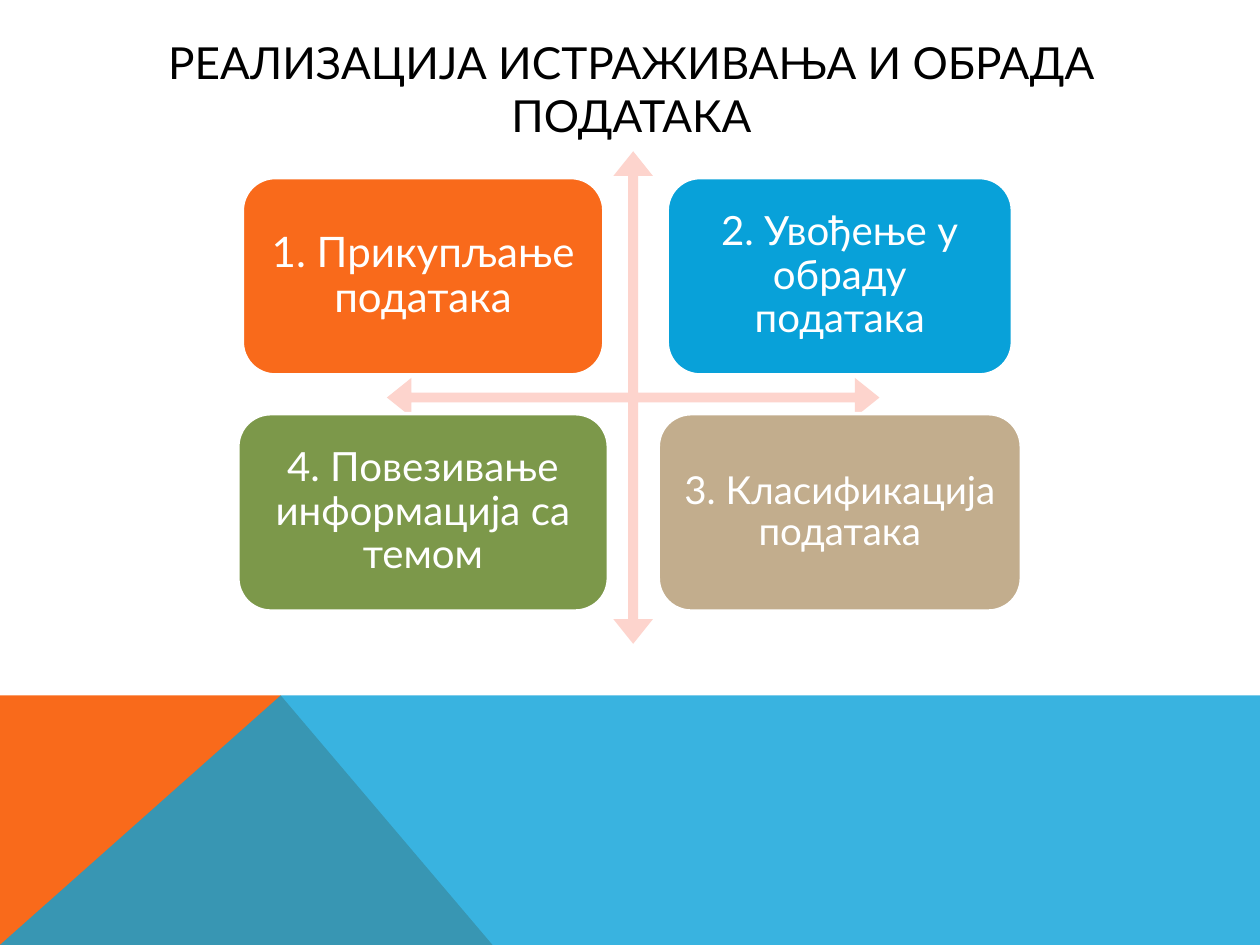
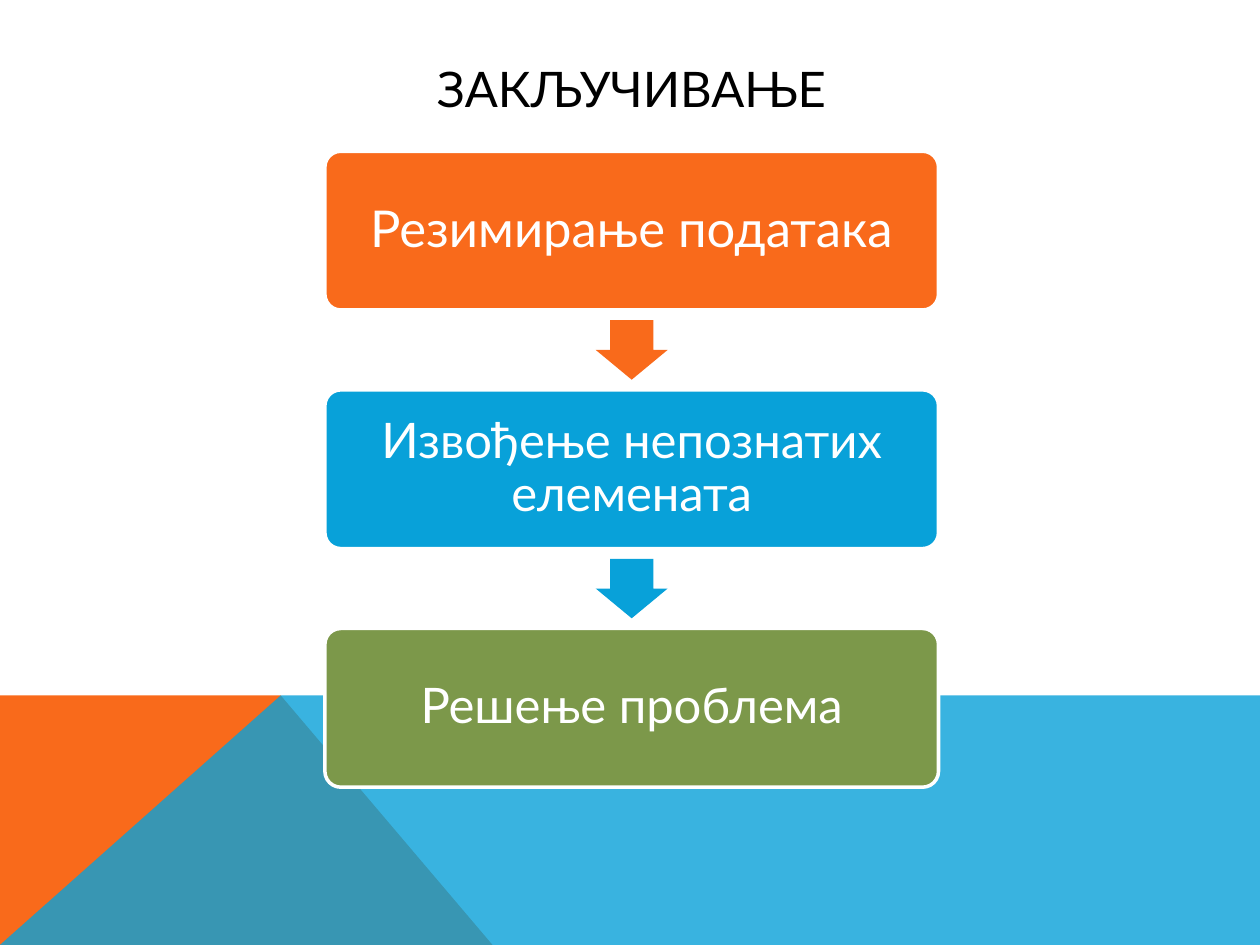
from lxml import etree
from pptx import Presentation, util as u
from pptx.dml.color import RGBColor
from pptx.enum import shapes, text
from pptx.oxml.ns import qn

Cm, Pt = u.Cm, u.Pt
SHAPE = shapes.MSO_SHAPE
FONT = "Lato"
W, H = 25.4, 19.05
COLORS = {
    "orange": "F96A1B", "blue": "08A1D9", "green": "7C984A", "sand": "C2AD8D",
    "pink": "FDD4CD", "white": "FFFFFF", "black": "000000",
}


def rgb(name):
    return RGBColor.from_string(COLORS[name])


def paint(sp, fill, line=None):
    sp.shadow.inherit = False
    sp.fill.solid()
    sp.fill.fore_color.rgb = rgb(fill)
    if line:
        sp.line.color.rgb = rgb(line)
        sp.line.width = Pt(2)
    else:
        sp.line.fill.background()


def write(sp, words, size, color, inset=0.25):
    tf = sp.text_frame
    tf.word_wrap = True
    tf.auto_size = text.MSO_AUTO_SIZE.NONE
    tf.vertical_anchor = text.MSO_ANCHOR.MIDDLE
    tf.margin_left = tf.margin_right = Cm(inset)
    tf.margin_top = tf.margin_bottom = Cm(min(inset, 0.3))
    p = tf.paragraphs[0]
    p.text = words
    p.alignment = text.PP_ALIGN.CENTER
    p.font.name, p.font.size = FONT, Pt(size)
    p.font.color.rgb = rgb(color)
    return p


def add_shape(s, kind, x, y, w, h, fill, line=None, adj=()):
    sp = s.shapes.add_shape(kind, Cm(x), Cm(y), Cm(w), Cm(h))
    for i, value in enumerate(adj):
        sp.adjustments[i] = value
    paint(sp, fill, line)
    return sp


def add_card(s, x, y, w, h, fill, words, size, adj=(), inset=0.25):
    sp = add_shape(s, SHAPE.ROUNDED_RECTANGLE, x, y, w, h, fill, "white", adj)
    write(sp, words, size, "white", inset).line_spacing = 0.9


def add_polygon(s, points, fill):
    start, *rest = [(Cm(x), Cm(y)) for x, y in points]
    fb = s.shapes.build_freeform(*start)
    fb.add_line_segments(rest, close=True)
    sp = fb.convert_to_shape()
    paint(sp, fill)
    return sp


def add_band(s, top=14.02, peak=5.66, foot=9.93):
    """Orange slope with a translucent blue one over it."""
    add_polygon(s, [(0, H), (0, top), (peak, top), (foot, H)], "orange")
    sp = add_polygon(s, [(0, H), (peak, top), (W, top), (W, H)], "blue")
    clr = sp.fill._xPr.find(".//" + qn("a:srgbClr"))
    etree.SubElement(clr, qn("a:alpha")).set("val", "80000")


def new_slide(prs, title, size):
    s = prs.slides.add_slide(prs.slide_layouts[5])
    add_band(s)
    sp = s.shapes.title
    sp.left, sp.top, sp.width, sp.height = Cm(2.29), Cm(1.02), Cm(20.88), Cm(1.52)
    write(sp, title, size, "black")
    return s


def add_matrix(s, x, y, side, cards):
    """Four cards around a crossed arrow that fills the box."""
    add_shape(s, SHAPE.QUAD_ARROW, x, y, side, side, "pink", adj=(0.02, 0.04, 0.05))
    card_h, row_step = 3.98, 4.76
    centers = (x + 0.73, x + 9.13)
    for i, (words, size, fill, w) in enumerate(cards):
        row, col = divmod(i, 2)
        add_card(s, centers[col] - w / 2, y + 0.53 + row * row_step, w, card_h,
                 fill, words, size)


def add_steps(s, x, y, w, steps):
    """Stacked steps with an arrow in each gap."""
    step_h, gap, arrow_w, arrow_h = 3.2, 1.61, 1.45, 1.2
    for i, (words, size, fill) in enumerate(steps):
        top = y + i * (step_h + gap)
        add_card(s, x, top, w, step_h, fill, words, size, (0.1,), 0.3)
        if i < len(steps) - 1:
            add_shape(s, SHAPE.DOWN_ARROW, x + (w - arrow_w) / 2,
                      top + step_h + (gap - arrow_h) / 2, arrow_w, arrow_h,
                      fill, adj=(0.6, 0.5))


def main():
    prs = Presentation()
    prs.slide_width, prs.slide_height = Cm(W), Cm(H)

    # Research and data processing
    s = new_slide(prs, "РЕАЛИЗАЦИЈА ИСТРАЖИВАЊА И ОБРАДА ПОДАТАКА", 25.2)
    add_matrix(s, 7.8, 3.05, 9.93, [
        ("1. Прикупљање података", 24, "orange", 7.29),
        ("2. Увођење у обраду података", 23, "blue", 6.96),
        ("4. Повезивање информација са темом", 23, "green", 7.47),
        ("3. Класификација података", 22, "sand", 7.32),
    ])

    # Conclusion
    s = new_slide(prs, "ЗАКЉУЧИВАЊЕ", 28)
    add_steps(s, 6.55, 3.05, 12.37, [
        ("Резимирање података", 29, "orange"),
        ("Извођење непознатих елемената", 28, "blue"),
        ("Решење проблема", 28, "green"),
    ])

    prs.save("out.pptx")


if __name__ == "__main__":
    main()
